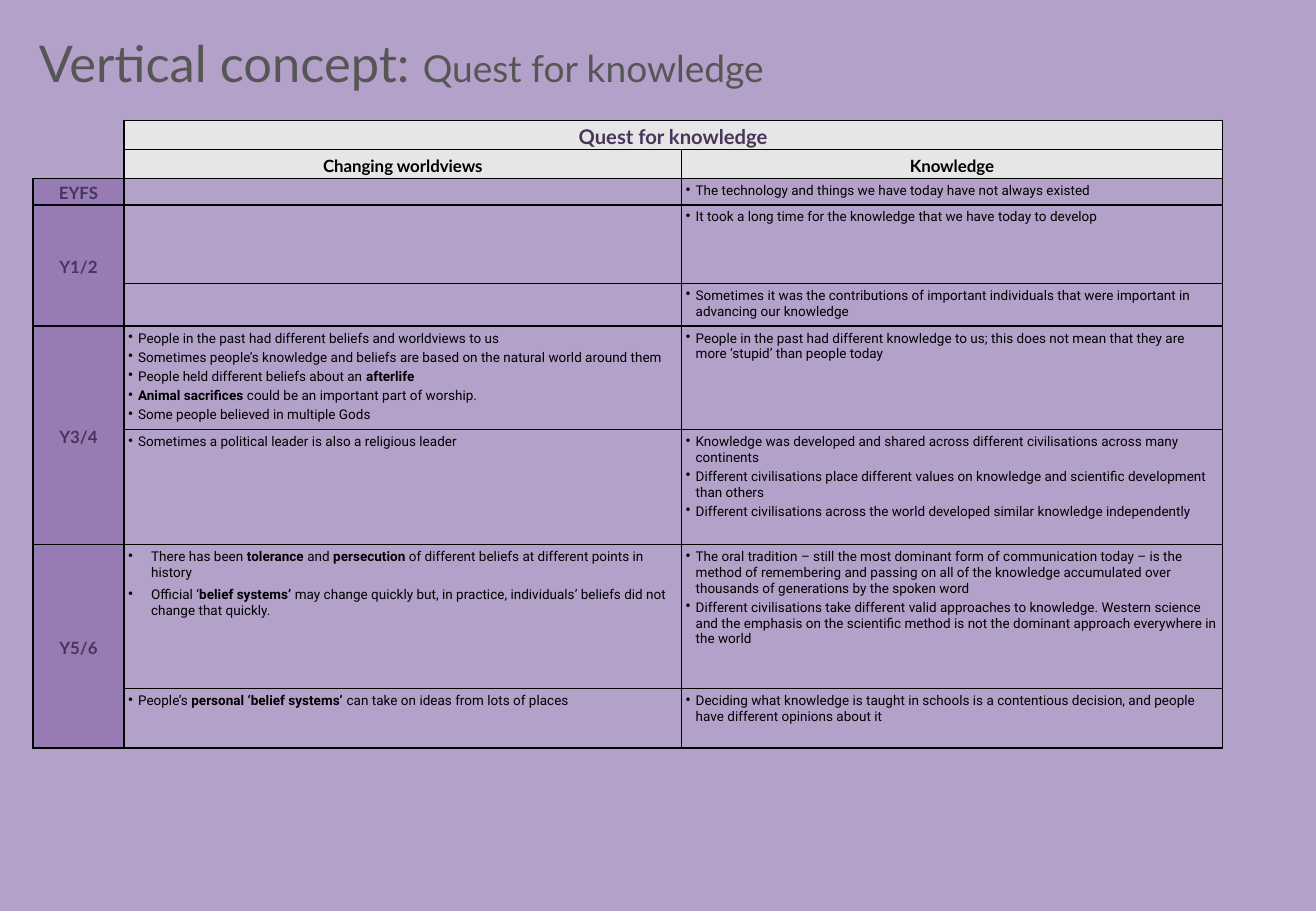
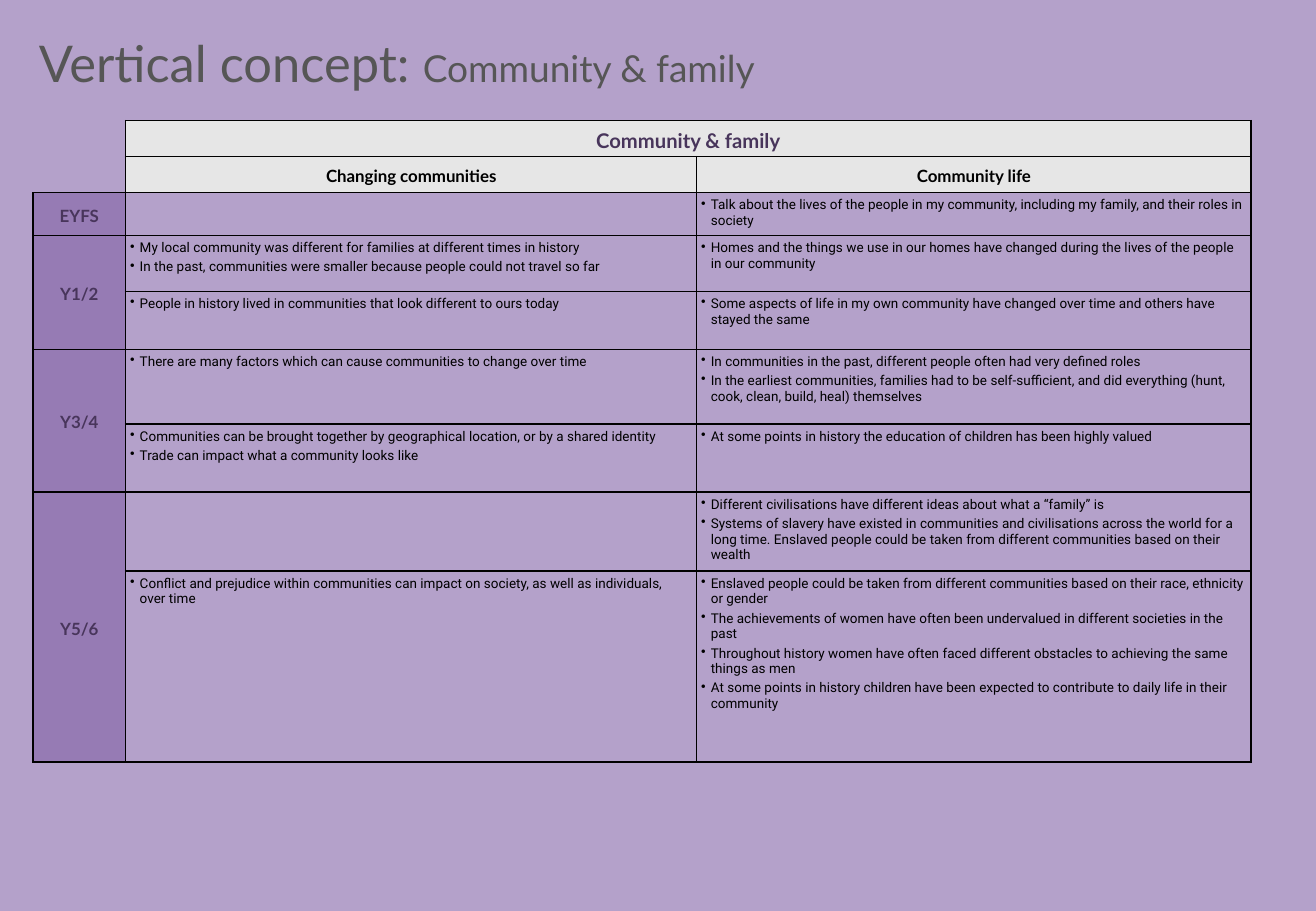
from dataclasses import dataclass

from lxml.etree import SubElement
from pptx import Presentation
from pptx.dml.color import RGBColor
from pptx.enum.text import MSO_ANCHOR, PP_ALIGN
from pptx.oxml.ns import qn
from pptx.util import Pt

BACKGROUND = "B4A1CA"
TITLE_GREY = "565656"
HEADER_GREY = "E6E6E6"
STAGE_PURPLE = "8262A6"
DARK_PURPLE = "48355B"
BLACK = "000000"
HEADING_FONT = "Lato"
BODY_FONT = "Roboto"

TABLE_LEFT, TABLE_TOP = 19.5, 71.5
STAGE_ROWS = {"EYFS": (2, 2), "Y1/2": (3, 4), "Y3/4": (5, 6), "Y5/6": (7, 8)}
FIRST_BODY_ROW = 2


@dataclass(frozen=True)
class BulletStyle:
    indent: float
    space_after: float


NARROW = BulletStyle(5.75, 2)
WIDE = BulletStyle(13.5, 4)


@dataclass(frozen=True)
class Points:
    texts: tuple[str, ...] = ()
    style: BulletStyle = NARROW


@dataclass(frozen=True)
class Concept:
    name: str
    strands: tuple[str, str]
    column_widths: tuple[float, ...]
    row_heights: tuple[float, ...]
    rows: tuple[tuple[Points, Points], ...]


def points(*texts: str, style: BulletStyle = NARROW) -> Points:
    return Points(texts, style)


def colour(value: str) -> RGBColor:
    return RGBColor.from_string(value)


def format_font(font, name: str, size: float, value: str, bold: bool = False) -> None:
    font.name = name
    font.size = Pt(size)
    font.bold = bold
    font.color.rgb = colour(value)


def add_title(slide, name: str) -> None:
    shape = slide.shapes.add_textbox(Pt(16), Pt(18.7), Pt(606), Pt(36))
    text_frame = shape.text_frame
    text_frame.word_wrap = True
    text_frame.vertical_anchor = MSO_ANCHOR.MIDDLE
    paragraph = text_frame.paragraphs[0]
    for text, size in (("Vertical concept: ", 30), (name, 22)):
        run = paragraph.add_run()
        run.text = text
        format_font(run.font, HEADING_FONT, size, TITLE_GREY)


def prepare_cell(cell, is_corner: bool) -> None:
    cell.margin_left = cell.margin_right = Pt(2.6)
    cell.margin_top = cell.margin_bottom = Pt(2.7)
    properties = cell._tc.get_or_add_tcPr()
    for side in ("lnL", "lnR", "lnT", "lnB"):
        line = SubElement(properties, qn(f"a:{side}"), w=str(Pt(1)))
        if is_corner and side in ("lnL", "lnT"):
            SubElement(line, qn("a:noFill"))
        else:
            fill = SubElement(line, qn("a:solidFill"))
            SubElement(fill, qn("a:srgbClr"), val=BLACK)
    cell.fill.background()


def shrink_empty_cell(cell) -> None:
    SubElement(cell.text_frame.paragraphs[0]._p, qn("a:endParaRPr"), sz="800")


def fill_cell(cell, value: str, opacity: int = 100) -> None:
    cell.fill.solid()
    cell.fill.fore_color.rgb = colour(value)
    if opacity < 100:
        srgb = cell._tc.tcPr.find(f"{qn('a:solidFill')}/{qn('a:srgbClr')}")
        SubElement(srgb, qn("a:alpha"), val=str(opacity * 1000))


def write_heading(cell, text: str, size: float, value: str) -> None:
    cell.margin_left = cell.margin_right = Pt(4.3)
    cell.margin_top = cell.margin_bottom = 0
    cell.vertical_anchor = MSO_ANCHOR.MIDDLE
    paragraph = cell.text_frame.paragraphs[0]
    paragraph.text = text
    paragraph.alignment = PP_ALIGN.CENTER
    paragraph.line_spacing = 1.15
    paragraph.space_after = Pt(10)
    format_font(paragraph.runs[0].font, HEADING_FONT, size, value, bold=True)


def write_points(cell, content: Points) -> None:
    text_frame = cell.text_frame
    for index, text in enumerate(content.texts):
        paragraph = text_frame.add_paragraph() if index else text_frame.paragraphs[0]
        properties = paragraph._p.get_or_add_pPr()
        indent = Pt(content.style.indent)
        properties.set("marL", str(indent))
        properties.set("indent", str(-indent))
        SubElement(properties, qn("a:buChar"), char="•")
        paragraph.space_after = Pt(content.style.space_after)
        for part_index, part in enumerate(text.split("**")):
            if part:
                run = paragraph.add_run()
                run.text = part
                format_font(run.font, BODY_FONT, 8, BLACK, bold=part_index % 2 == 1)


def add_concept_table(slide, concept: Concept) -> None:
    widths, heights = concept.column_widths, concept.row_heights
    table = slide.shapes.add_table(
        len(heights), len(widths), Pt(TABLE_LEFT), Pt(TABLE_TOP),
        Pt(sum(widths)), Pt(sum(heights)),
    ).table
    table.first_row = False
    table.horz_banding = False
    for column, width in zip(table.columns, widths):
        column.width = Pt(width)
    for row, height in zip(table.rows, heights):
        row.height = Pt(height)
    for row_index in range(len(heights)):
        for column_index in range(len(widths)):
            is_corner = column_index == 0 and row_index < FIRST_BODY_ROW
            prepare_cell(table.cell(row_index, column_index), is_corner)

    table.cell(0, 0).merge(table.cell(1, 0))
    table.cell(0, 1).merge(table.cell(0, 2))
    fill_cell(table.cell(0, 1), HEADER_GREY)
    write_heading(table.cell(0, 1), concept.name, 12, DARK_PURPLE)
    for column_index, strand in enumerate(concept.strands, start=1):
        fill_cell(table.cell(1, column_index), HEADER_GREY)
        write_heading(table.cell(1, column_index), strand, 10, BLACK)

    for stage, (first, last) in STAGE_ROWS.items():
        cell = table.cell(first, 0)
        if last > first:
            cell.merge(table.cell(last, 0))
        fill_cell(cell, STAGE_PURPLE, opacity=60)
        write_heading(cell, stage, 10, DARK_PURPLE)

    for row_index, contents in enumerate(concept.rows, start=FIRST_BODY_ROW):
        for column_index, content in enumerate(contents, start=1):
            write_points(table.cell(row_index, column_index), content)

    for cell in table.iter_cells():
        if not cell.text_frame.text:
            shrink_empty_cell(cell)


KNOWLEDGE = Concept(
    "Quest for knowledge",
    ("Changing worldviews", "Knowledge"),
    (54, 330.5, 320.5),
    (17.2, 17.2, 15.6, 46.6, 25.2, 60.4, 68.2, 85.4, 35.2),
    (
        (points(), points("The technology and things we have today have not always existed")),
        (points(), points("It took a long time for the knowledge that we have today to develop")),
        (points(), points(
            "Sometimes it was the contributions of important individuals that were "
            "important in advancing our knowledge")),
        (points(
            "People in the past had different beliefs and worldviews to us",
            "Sometimes people’s knowledge and beliefs are based on the natural world around them",
            "People held different beliefs about an **afterlife**",
            "**Animal sacrifices** could be an important part of worship.",
            "Some people believed in multiple Gods"),
         points(
            "People in the past had different knowledge to us; this does not mean that "
            "they are more ‘stupid’ than people today")),
        (points("Sometimes a political leader is also a religious leader"),
         points(
            "Knowledge was developed and shared across different civilisations across "
            "many continents",
            "Different civilisations place different values on knowledge and scientific "
            "development than others",
            "Different civilisations across the world developed similar knowledge "
            "independently")),
        (points(
            "There has been **tolerance** and **persecution** of different beliefs at "
            "different points in history",
            "Official ‘**belief systems’ **may change quickly but, in practice, "
            "individuals’ beliefs did not change that quickly.",
            style=WIDE),
         points(
            "The oral tradition – still the most dominant form of communication today – "
            "is the method of remembering and passing on all of the knowledge accumulated "
            "over thousands of generations by the spoken word",
            "Different civilisations take different valid approaches to knowledge. "
            "Western science and the emphasis on the scientific method is not the "
            "dominant approach everywhere in the world")),
        (points("People’s **personal ‘belief systems’ **can take on ideas from lots of places"),
         points(
            "Deciding what knowledge is taught in schools is a contentious decision, and "
            "people have different opinions about it")),
    ),
)

COMMUNITY = Concept(
    "Community & family",
    ("Changing communities", "Community life"),
    (55, 338.5, 328.5),
    (21.4, 21.4, 25.4, 33, 34.4, 44.4, 40.3, 46.8, 113.2),
    (
        (points(), points(
            "Talk about the lives of the people in my community, including my family, "
            "and their roles in society")),
        (points(
            "My local community was different for families at different times in history",
            "In the past, communities were smaller because people could not travel so far"),
         points(
            "Homes and the things we use in our homes have changed during the lives of "
            "the people in our community")),
        (points("People in history lived in communities that look different to ours today"),
         points(
            "Some aspects of life in my own community have changed over time and others "
            "have stayed the same")),
        (points("There are many factors which can cause communities to change over time"),
         points(
            "In communities in the past, different people often had very defined roles",
            "In the earliest communities, families had to be self-sufficient, and did "
            "everything (hunt, cook, clean, build, heal) themselves")),
        (points(
            "Communities can be brought together by geographical location, or by a "
            "shared identity",
            "Trade can impact what a community looks like"),
         points("At some points in history the education of children has been highly valued")),
        (points(), points(
            "Different civilisations have different ideas about what a “family” is",
            "Systems of slavery have existed in communities and civilisations across the "
            "world for a long time. Enslaved people could be taken from different "
            "communities based on their wealth")),
        (points(
            "Conflict and prejudice within communities can impact on society, as well as "
            "individuals, over time"),
         points(
            "Enslaved people could be taken from different communities based on their "
            "race, ethnicity or gender",
            "The achievements of women have often been undervalued in different "
            "societies in the past",
            "Throughout history women have often faced different obstacles to achieving "
            "the same things as men",
            "At some points in history children have been expected to contribute to "
            "daily life in their community")),
    ),
)


def main() -> None:
    presentation = Presentation()
    presentation.slide_width = Pt(780)
    presentation.slide_height = Pt(540)
    for concept in (KNOWLEDGE, COMMUNITY):
        slide = presentation.slides.add_slide(presentation.slide_layouts[6])
        slide.background.fill.solid()
        slide.background.fill.fore_color.rgb = colour(BACKGROUND)
        add_title(slide, concept.name)
        add_concept_table(slide, concept)
    presentation.save("out.pptx")


if __name__ == "__main__":
    main()
